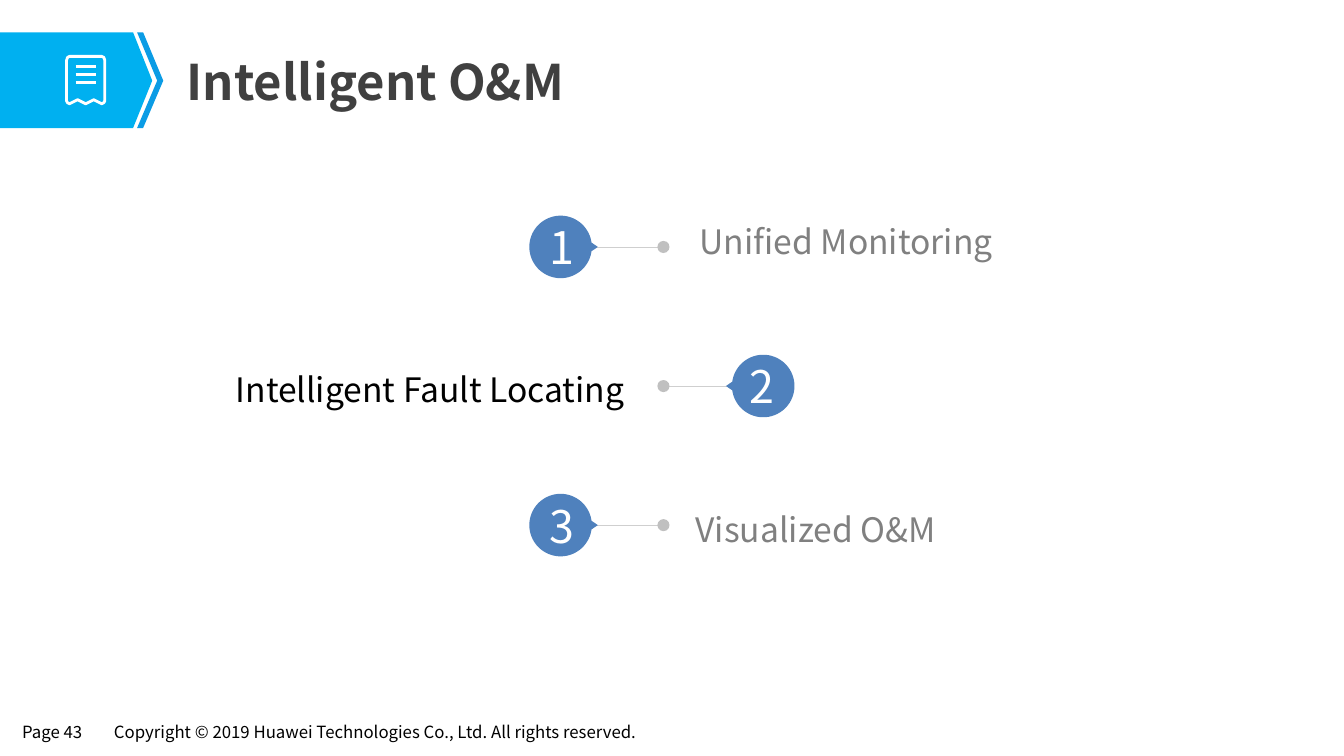
from math import cos, radians, sin

from lxml.etree import SubElement
from pptx import Presentation
from pptx.dml.color import RGBColor
from pptx.enum.shapes import MSO_CONNECTOR, MSO_SHAPE
from pptx.enum.text import MSO_ANCHOR, MSO_AUTO_SIZE, PP_ALIGN
from pptx.oxml.ns import qn
from pptx.util import Inches, Pt

BLACK = RGBColor(0x00, 0x00, 0x00)
WHITE = RGBColor(0xFF, 0xFF, 0xFF)
TITLE_GRAY = RGBColor(0x40, 0x40, 0x40)
MUTED = RGBColor(0x80, 0x80, 0x80)
DOT_GRAY = RGBColor(0xC0, 0xC0, 0xC0)
LINE_GRAY = RGBColor(0xCF, 0xCF, 0xCF)
BANNER_BLUE = RGBColor(0x00, 0xB0, 0xF0)
CHEVRON_BLUE = RGBColor(0x0B, 0x9C, 0xE5)
BADGE_BLUE = RGBColor(0x4F, 0x81, 0xBD)


class AgendaPage:
    """Holds the type style and the slide, and draws each kind of element."""

    font_name = "Noto Sans CJK SC"

    def __init__(self, deck):
        self.page = deck.slides.add_slide(deck.slide_layouts[5])
        self.shapes = self.page.shapes

    def set_text(self, frame, text, size, color, align=PP_ALIGN.LEFT, insets=(0, 0, 0, 0), bold=False):
        frame.text = text
        frame.auto_size = MSO_AUTO_SIZE.NONE
        frame.vertical_anchor = MSO_ANCHOR.MIDDLE
        frame.margin_left, frame.margin_top, frame.margin_right, frame.margin_bottom = map(Inches, insets)
        para = frame.paragraphs[0]
        para.alignment = align
        font = para.runs[0].font
        font.name, font.size, font.bold = self.font_name, Pt(size), bold
        font.color.rgb = color
        return para

    def title(self, text, left, top, width, height):
        title = self.shapes.title
        title.left, title.top, title.width, title.height = map(Inches, (left, top, width, height))
        self.set_text(title.text_frame, text, 35, TITLE_GRAY, insets=(0.11, 0.06, 0.11, 0.06), bold=True)

    def label(self, text, left, top, width, height, color, align):
        box = self.shapes.add_textbox(*map(Inches, (left, top, width, height)))
        box.text_frame.word_wrap = True
        self.set_text(box.text_frame, text, 24, color, align).line_spacing = 1.2

    def footer(self, text, left, width):
        box = self.shapes.add_textbox(*map(Inches, (left, 7.11, width, 0.29)))
        box.text_frame.word_wrap = False
        self.set_text(box.text_frame, text, 12, BLACK, insets=(0.09, 0.04, 0.09, 0.04))

    def outline(self, points, fill=None, line=None, weight=0):
        corners = [(Inches(x), Inches(y)) for x, y in points]
        builder = self.shapes.build_freeform(*corners[0])
        builder.add_line_segments(corners[1:], close=True)
        shape = builder.convert_to_shape()
        shape.shadow.inherit = False
        if fill is None:
            shape.fill.background()
        else:
            shape.fill.solid()
            shape.fill.fore_color.rgb = fill
        if line is None:
            shape.line.fill.background()
        else:
            shape.line.color.rgb = line
            shape.line.width = Pt(weight)
        return shape

    def line(self, x1, x2, y, color, weight):
        rule = self.shapes.add_connector(MSO_CONNECTOR.STRAIGHT, *map(Inches, (x1, y, x2, y)))
        rule.line.color.rgb = color
        rule.line.width = Pt(weight)
        SubElement(rule._element.spPr, qn("a:effectLst"))

    def dot(self, center_x, center_y, size):
        dot = self.shapes.add_shape(
            MSO_SHAPE.OVAL, *map(Inches, (center_x - size / 2, center_y - size / 2, size, size)))
        dot.shadow.inherit = False
        dot.fill.solid()
        dot.fill.fore_color.rgb = DOT_GRAY
        dot.line.fill.background()

    def badge(self, number, center_x, center_y, side):
        radius = 0.31
        arc = [(center_x + side * radius * cos(radians(angle)), center_y + radius * sin(radians(angle)))
               for angle in range(8, 353, 4)]
        shape = self.outline(arc + [(center_x + side * 0.37, center_y)], BADGE_BLUE)
        insets = (0, 0, 0.04, 0) if side > 0 else (0.04, 0, 0, 0)
        self.set_text(shape.text_frame, number, 32, WHITE, PP_ALIGN.CENTER, insets)

    def banner(self):
        top, middle, bottom = 0.32, 0.8, 1.27
        self.outline([(0, top), (1.32, top), (1.51, middle), (1.32, bottom), (0, bottom)], BANNER_BLUE)
        self.outline([(1.36, top), (1.42, top), (1.62, middle), (1.42, bottom), (1.36, bottom),
                      (1.56, middle)], CHEVRON_BLUE)
        receipt = [(0.66, 0.6), (0.67, 0.57), (0.69, 0.56), (1.01, 0.56), (1.03, 0.57), (1.04, 0.6),
                   (1.04, 1), (1.03, 1.02), (1.01, 1.03), (0.93, 0.99), (0.85, 1.03), (0.77, 0.99),
                   (0.69, 1.03), (0.67, 1.02), (0.66, 1)]
        self.outline(receipt, line=WHITE, weight=2)
        for row in range(3):
            self.line(0.75, 0.95, 0.66 + row * 0.08, WHITE, 1.75)


def main():
    deck = Presentation()
    deck.slide_width, deck.slide_height = Inches(13.33), Inches(7.5)
    agenda = AgendaPage(deck)
    agenda.footer("Page 43", 0.13, 0.84)
    agenda.footer("Copyright © 2019 Huawei Technologies Co., Ltd. All rights reserved.", 1.04, 5.61)
    agenda.banner()
    agenda.title("Intelligent O&M", 1.74, 0.45, 10.75, 0.7)

    topics = [
        ("Unified Monitoring", 6.94, 1.84, 3.43, MUTED),
        ("Intelligent Fault Locating", 1.98, 3.3, 4.21, BLACK),
        ("Visualized O&M", 6.9, 4.69, 3.43, MUTED),
    ]
    for index, (text, left, top, width, color) in enumerate(topics):
        center_y = 2.45 + index * 1.38
        side = -1 if index % 2 else 1
        badge_x = 5.56 if side > 0 else 7.57
        align = PP_ALIGN.LEFT if side > 0 else PP_ALIGN.RIGHT
        agenda.line(6.58, badge_x + side * 0.34, center_y, LINE_GRAY, 0.5)
        agenda.label(text, left, top, width, 1.03, color, align)
        agenda.dot(6.58, center_y, 0.12)
        agenda.badge(str(index + 1), badge_x, center_y, side)
    deck.save("out.pptx")


if __name__ == "__main__":
    main()
